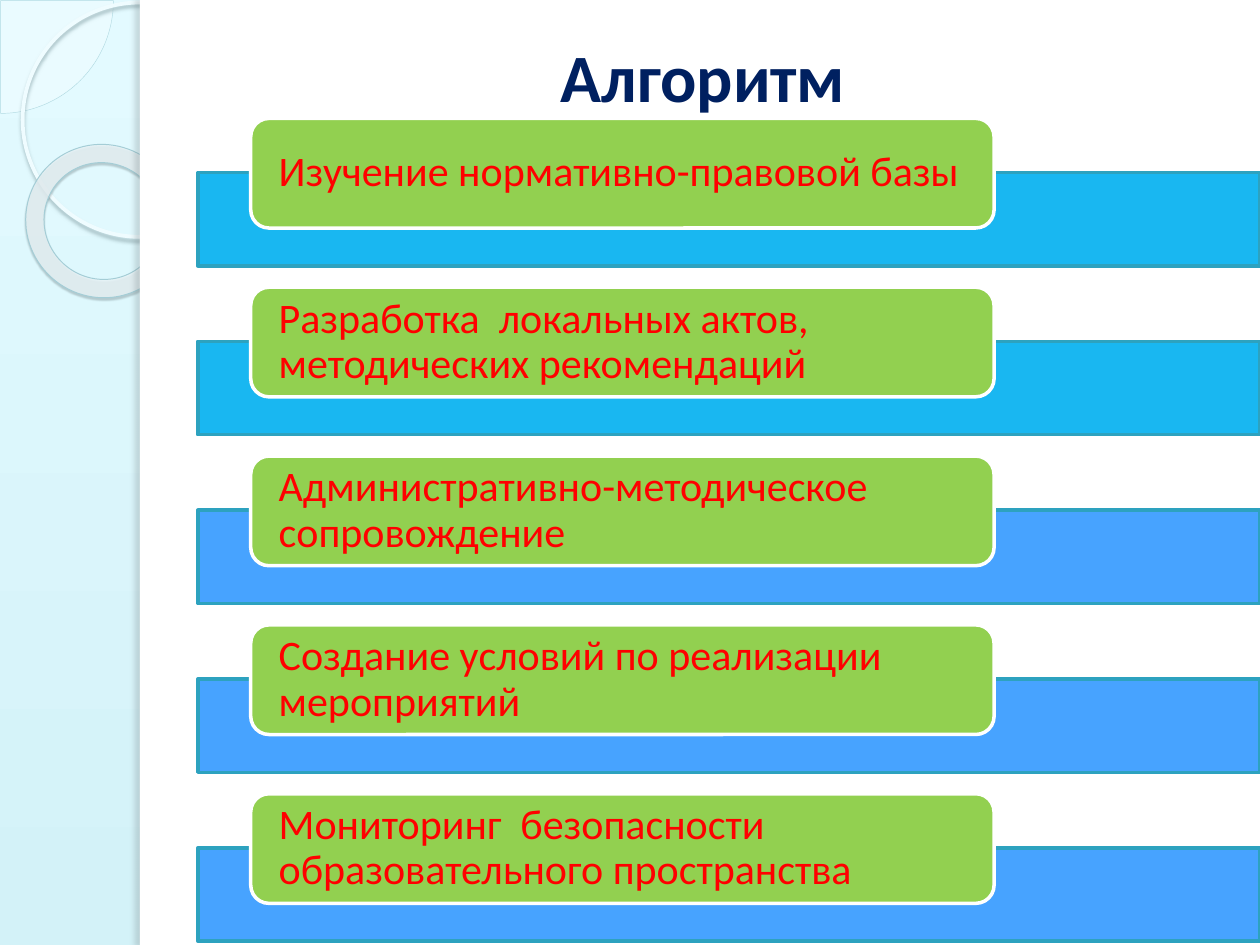
from lxml import etree
from pptx import Presentation
from pptx.dml.color import RGBColor
from pptx.enum.shapes import MSO_SHAPE
from pptx.enum.text import MSO_ANCHOR, MSO_AUTO_SIZE, PP_ALIGN
from pptx.oxml.ns import qn
from pptx.util import Inches, Pt

RECT, ROUND = MSO_SHAPE.RECTANGLE, MSO_SHAPE.ROUNDED_RECTANGLE
PIE, OVAL, DONUT = MSO_SHAPE.PIE, MSO_SHAPE.OVAL, MSO_SHAPE.DONUT
LEFT, CENTER = PP_ALIGN.LEFT, PP_ALIGN.CENTER
MIDDLE, NO_FIT = MSO_ANCHOR.MIDDLE, MSO_AUTO_SIZE.NONE

COLORS = {
    "bg_top": "E3FAFF", "bg_bottom": "D3F2F8", "white": "FFFFFF",
    "pale": "F9FEFF", "pie_line": "B2DAE2", "ring": "EFFCFF",
    "ring_shadow": "9FB9BE", "donut": "E9F3F6", "donut_line": "A4CDD6",
    "donut_shadow": "4C5D61", "panel_shadow": "6E7A7D",
    "title": "002060", "text": "FF0000", "card": "92D050",
    "cyan": "00B0F0", "blue": "3399FF", "bar_line": "2DA2BF",
}
STEPS = [
    ("Изучение нормативно-правовой базы", "cyan"),
    ("Разработка  локальных актов, методических рекомендаций", "cyan"),
    ("Административно-методическое сопровождение", "blue"),
    ("Создание условий по реализации мероприятий", "blue"),
    ("Мониторинг  безопасности образовательного пространства", "blue"),
]
FIRST_TOP, STEP_PITCH, BAR_DROP = 0.94, 1.34, 0.43


def rgb(name):
    return RGBColor.from_string(COLORS[name])


def add_shape(s, kind, box, fill=None, alpha=100, line=None, width=1):
    sp = s.shapes.add_shape(kind, *map(Inches, box))
    sp.shadow.inherit = False
    if fill:
        sp.fill.solid()
        sp.fill.fore_color.rgb = rgb(fill)
        if alpha < 100:
            color = sp.element.spPr.find(qn("a:solidFill"))[0]
            etree.SubElement(color, qn("a:alpha"), val=str(alpha * 1000))
    else:
        sp.fill.background()
    if line:
        sp.line.color.rgb = rgb(line)
        sp.line.width = Pt(width)
    else:
        sp.line.fill.background()
    return sp


def add_shadow(sp, color, alpha, blur, dist, angle):
    effects = sp.element.spPr.find(qn("a:effectLst"))
    shadow = etree.SubElement(
        effects, qn("a:outerShdw"), blurRad=str(Pt(blur)), dist=str(Pt(dist)),
        dir=str(angle * 60000), algn="tl", rotWithShape="0")
    clr = etree.SubElement(shadow, qn("a:srgbClr"), val=COLORS[color])
    etree.SubElement(clr, qn("a:alpha"), val=str(alpha * 1000))


def set_text(sp, text, color, size, bold, align, frame):
    tf = sp.text_frame
    for name, value in frame.items():
        setattr(tf, name, value)
    p = tf.paragraphs[0]
    p.alignment = align
    r = p.add_run()
    r.text = text
    for name, value in {"name": "Calibri", "size": Pt(size), "bold": bold}.items():
        setattr(r.font, name, value)
    r.font.color.rgb = rgb(color)
    return p


def add_background(s):
    fill = s.background.fill
    fill.gradient()
    fill.gradient_angle = 270
    for stop, name, pos in zip(fill.gradient_stops, ("bg_top", "bg_bottom"), (0, 1)):
        stop.color.rgb = rgb(name)
        stop.position = pos


def add_decoration(s):
    # Circles on the left strip
    pie = add_shape(s, PIE, (-0.89, -0.89, 1.79, 1.79), "pale", 33, "pie_line", 0.25)
    pie.adjustments[0], pie.adjustments[1] = 0, 54
    ring = add_shape(s, OVAL, (0.18, 0.02, 1.86, 1.86), line="ring", width=2.15)
    add_shadow(ring, "ring_shadow", 85, 2, 2, 90)
    donut = add_shape(s, DONUT, (0.2, 1.15, 1.23, 1.21), "donut", 80, "donut_line", 0.58)
    donut.adjustments[0] = 0.12
    donut.rotation = 38.6
    add_shadow(donut, "donut_shadow", 35, 1, 1.2, 75)
    # White panel with a shaded left edge
    add_shape(s, RECT, (1.11, 0, 8.89, 7.5), "white")
    edge = add_shape(s, RECT, (1.11, 0, 0.08, 7.5), "white")
    add_shadow(edge, "panel_shadow", 25, 3, 3, 180)


def add_title(s, text):
    title = s.shapes.title
    title.element.getparent().append(title.element)  # in front of the panel
    box = zip(("left", "top", "width", "height"), (1.54, 0.21, 8.2, 0.77))
    for name, value in box:
        setattr(title, name, Inches(value))
    frame = {"vertical_anchor": MIDDLE, "auto_size": NO_FIT, "word_wrap": True}
    set_text(title, text, "title", 38.7, True, CENTER, frame)


def add_step(s, top, text, bar_color):
    add_shape(s, RECT, (1.57, top + BAR_DROP, 8.43, 0.74), bar_color, 90, "bar_line", 2)
    card = add_shape(s, ROUND, (1.99, top, 5.9, 0.87), "card", line="white", width=2)
    # The rounded corners add 0.04 to each side inset
    frame = {"vertical_anchor": MIDDLE, "word_wrap": True,
             "margin_left": Inches(0.18), "margin_right": Inches(0.18),
             "margin_top": 0, "margin_bottom": 0}
    p = set_text(card, text, "text", 24, False, LEFT, frame)
    p.line_spacing = 0.9


def main():
    prs = Presentation()
    prs.slide_width, prs.slide_height = Inches(10), Inches(7.5)
    s = prs.slides.add_slide(prs.slide_layouts[5])
    add_background(s)
    add_decoration(s)
    add_title(s, "Алгоритм ")
    for i, (text, bar_color) in enumerate(STEPS):
        add_step(s, FIRST_TOP + i * STEP_PITCH, text, bar_color)
    prs.save("out.pptx")


if __name__ == "__main__":
    main()
